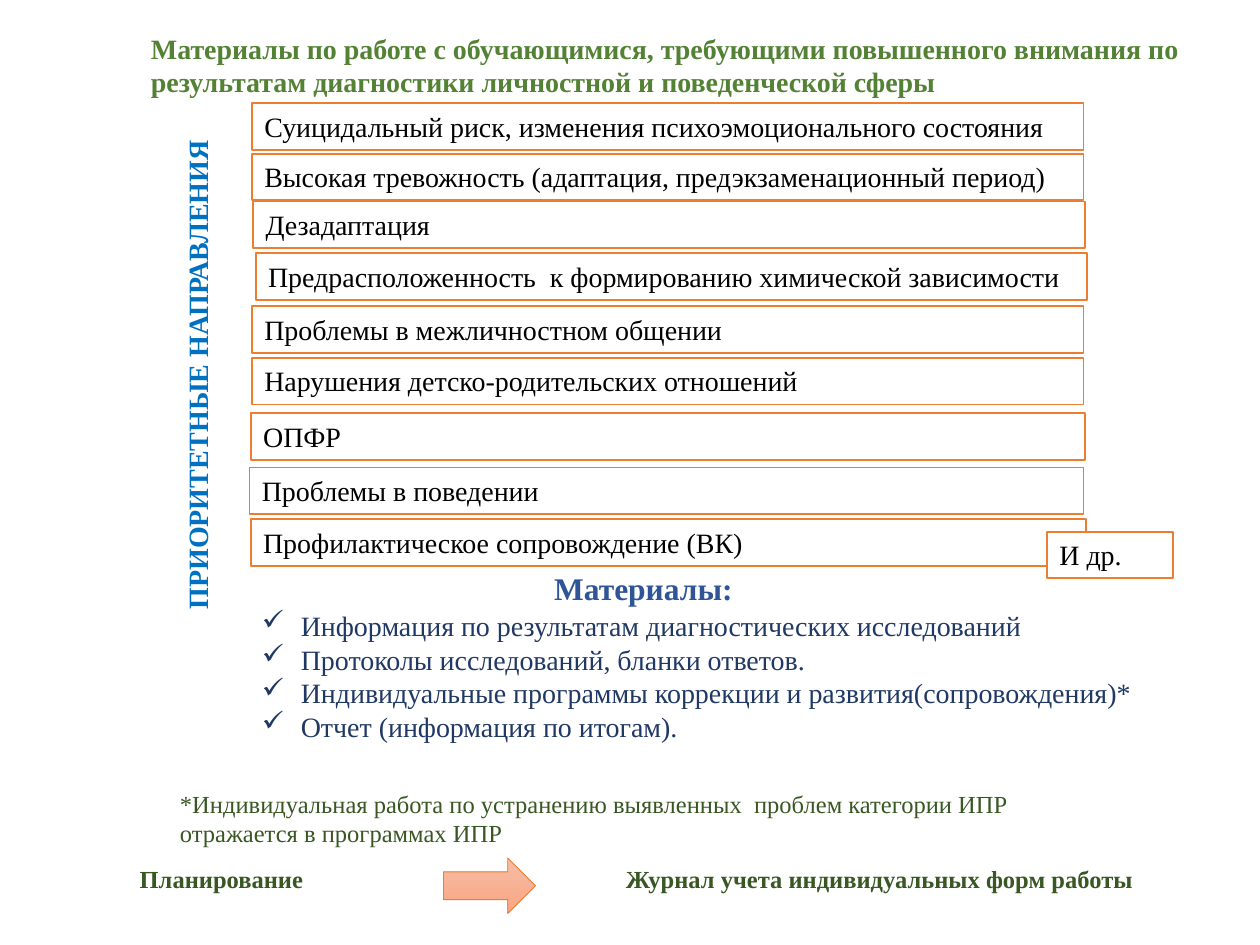
import pptx
import pptx.dml.color
import pptx.enum.shapes
import pptx.enum.text
import pptx.util
from lxml import etree
from pptx.oxml.ns import qn

Inches = pptx.util.Inches
SHAPES = pptx.enum.shapes.MSO_SHAPE
ALIGN = pptx.enum.text.PP_ALIGN
ANCHOR = pptx.enum.text.MSO_ANCHOR

FONT = "Times New Roman"
ORANGE = "ED7D31"
DARK_GREEN = "385723"
ROW_HEIGHT = 0.37

# Text, left, top, width of each priority area
PRIORITIES = [
    ("Суицидальный риск, изменения психоэмоционального состояния", 2, 0.82, 6.6),
    ("Высокая тревожность (адаптация, предэкзаменационный период)", 2, 1.22, 6.6),
    ("Дезадаптация", 2.01, 1.6, 6.6),
    ("Предрасположенность  к формированию химической зависимости", 2.03, 2.01, 6.6),
    ("Проблемы в межличностном общении", 2, 2.43, 6.6),
    ("Нарушения детско-родительских отношений", 2, 2.84, 6.6),
    ("ОПФР", 1.99, 3.28, 6.62),
    ("Проблемы в поведении", 1.98, 3.71, 6.62),
    ("Профилактическое сопровождение (ВК)", 1.99, 4.12, 6.63),
    ("И др.", 8.31, 4.22, 1),
]

MATERIALS = [
    "Информация по результатам диагностических исследований",
    "Протоколы исследований, бланки ответов.",
    "Индивидуальные программы коррекции и развития(сопровождения)*",
    "Отчет (информация по итогам).",
]


def rgb(value):
    return pptx.dml.color.RGBColor.from_string(value)


def add_check_mark(paragraph):
    properties = paragraph._p.get_or_add_pPr()
    properties.set("marL", str(Inches(0.31)))
    properties.set("indent", str(-Inches(0.31)))
    etree.SubElement(properties, qn("a:buChar")).set("char", "✓")


def write(frame, *lines, size=16, color="000000", bold=False,
          align=ALIGN.LEFT, checks=False):
    frame.word_wrap = True
    for number, line in enumerate(lines):
        paragraph = frame.add_paragraph() if number else frame.paragraphs[0]
        if checks:
            add_check_mark(paragraph)
        paragraph.alignment = align
        run = paragraph.add_run()
        run.text = line
        run.font.name = FONT
        run.font.size = pptx.util.Pt(size)
        run.font.bold = bold
        run.font.color.rgb = rgb(color)


def add_label(slide, box, *lines, **text_format):
    label = slide.shapes.add_textbox(*map(Inches, box))
    write(label.text_frame, *lines, **text_format)
    return label


def add_outlined(slide, kind, box, line_width):
    outlined = slide.shapes.add_shape(kind, *map(Inches, box))
    outlined.shadow.inherit = False
    outlined.line.color.rgb = rgb(ORANGE)
    outlined.line.width = pptx.util.Pt(line_width)
    return outlined


def add_priority(slide, box, text):
    row = add_outlined(slide, SHAPES.RECTANGLE, box, 1)
    row.fill.solid()
    row.fill.fore_color.rgb = rgb("FFFFFF")
    row.text_frame.vertical_anchor = ANCHOR.TOP
    write(row.text_frame, text)


def add_priorities(slide, side_box):
    for text, left, top, width in PRIORITIES:
        add_priority(slide, (left, top, width, ROW_HEIGHT), text)
    side_title = add_label(slide, side_box, "ПРИОРИТЕТНЫЕ НАПРАВЛЕНИЯ",
                           color="0070C0", bold=True, align=ALIGN.CENTER)
    side_title.rotation = 270


def add_materials(slide, box):
    left, top, width, height = box
    add_label(slide, (left + 2.32, top, 1.7, 0.4), "Материалы:",
              size=18, color="2F5597", bold=True)
    add_label(slide, (left, top + 0.31, width, height - 0.31), *MATERIALS,
              color="203864", checks=True)


def add_planning(slide, box):
    left, top, width, height = box
    add_label(slide, (left, top, 2.15, 0.34), "Планирование",
              size=14, color=DARK_GREEN, bold=True)
    add_label(slide, (left + width - 4.7, top, 4.7, 0.34),
              "Журнал учета индивидуальных форм работы",
              size=14, color=DARK_GREEN, bold=True)
    arrow = add_outlined(slide, SHAPES.RIGHT_ARROW,
                         (left + 2.51, top, 0.73, height), 0.5)
    arrow.fill.gradient()
    arrow.fill.gradient_angle = 270
    for stop, color in zip(arrow.fill.gradient_stops, ("F7BDA5", "F8A582")):
        stop.color.rgb = rgb(color)


def main():
    deck = pptx.Presentation()
    deck.slide_width, deck.slide_height = Inches(10), Inches(7.5)
    slide = deck.slides.add_slide(deck.slide_layouts[6])

    # Title
    add_label(slide, (1.1, 0.2, 8.46, 0.64),
              "Материалы по работе с обучающимися, требующими повышенного "
              "внимания по результатам диагностики личностной и "
              "поведенческой сферы", color="548235", bold=True)
    # Priority areas with their vertical title
    add_priorities(slide, (-0.59, 2.79, 4.31, ROW_HEIGHT))
    # Materials and the footnote
    add_materials(slide, (1.98, 4.47, 7.1, 1.76))
    add_label(slide, (1.33, 6.21, 6.98, 0.57),
              "*Индивидуальная работа по устранению выявленных  проблем "
              "категории ИПР отражается в программах ИПР",
              size=14, color=DARK_GREEN)
    # From planning to the journal
    add_planning(slide, (1.01, 6.81, 8.56, 0.44))

    deck.save("out.pptx")


if __name__ == "__main__":
    main()
